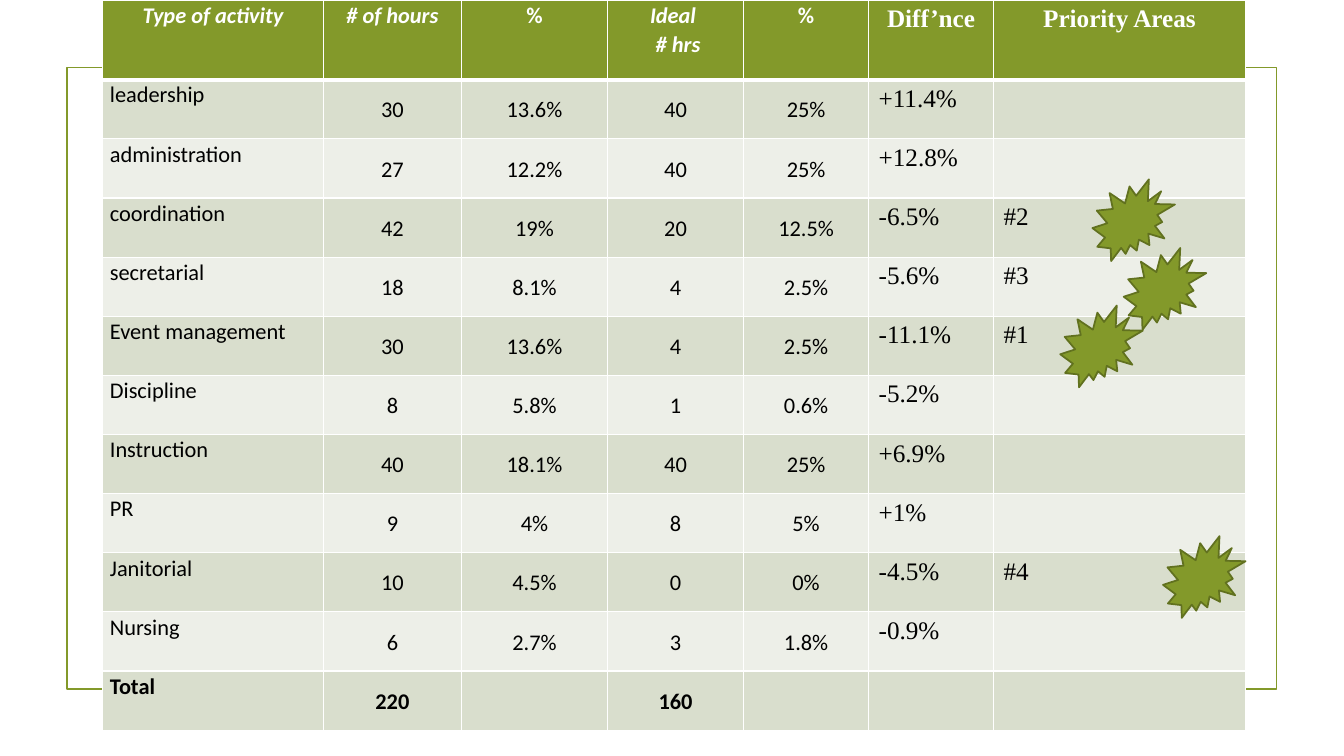
from dataclasses import dataclass
from lxml.etree import SubElement
from pptx import Presentation
from pptx.dml.color import RGBColor
from pptx.enum.shapes import MSO_SHAPE
from pptx.enum.text import MSO_ANCHOR, PP_ALIGN
from pptx.oxml.ns import qn
from pptx.util import Cm, Pt


@dataclass(frozen=True)
class Theme:
    green: str = "83992A"
    edge: str = "61711F"
    dark: str = "D9DECD"
    light: str = "EDEFE8"
    white: str = "FFFFFF"
    black: str = "000000"
    sans: str = "Calibri"
    serif: str = "Times New Roman"
    small: int = 16
    large: int = 18
    line: float = 1.25
    rule: int = 1
    heavy: int = 3


THEME = Theme()
WIDTHS = (5.56, 3.48, 3.68, 3.43, 3.15, 3.15, 6.35)
HEAD_HEIGHT = 2.01
ROW_HEIGHT = 1.49
SERIF_START = 5
ROWS = (
    ("Type of activity", "# of hours", "%", "Ideal \n # hrs", "%", "Diff’nce", "Priority Areas"),
    ("leadership", "30", "13.6%", "40", "25%", "+11.4%", ""),
    ("administration", "27", "12.2%", "40", "25%", "+12.8%", ""),
    ("coordination", "42", "19%", "20", "12.5%", "-6.5%", "#2"),
    ("secretarial", "18", "8.1%", "4", "2.5%", "-5.6%", "#3"),
    ("Event management", "30", "13.6%", "4", "2.5%", "-11.1%", "#1"),
    ("Discipline", "8", "5.8%", "1", "0.6%", "-5.2%", ""),
    ("Instruction", "40", "18.1%", "40", "25%", "+6.9%", ""),
    ("PR", "9", "4%", "8", "5%", "+1%", ""),
    ("Janitorial", "10", "4.5%", "0", "0%", "-4.5%", "#4"),
    ("Nursing", "6", "2.7%", "3", "1.8%", "-0.9%", ""),
    ("Total", "220", "", "160", "", "", ""),
)
BURSTS = ((26.72, 7.7), (27.53, 4.52), (29.31, 13.51), (28.32, 6.25))


def paint(item, color):
    item.fill.solid()
    item.fill.fore_color.rgb = RGBColor.from_string(color)


def add_shape(slide, kind, box, fill, line):
    shape = slide.shapes.add_shape(kind, *map(Cm, box))
    shape.shadow.inherit = False
    if fill:
        paint(shape, fill)
    else:
        shape.fill.background()
    shape.line.color.rgb = RGBColor.from_string(line)
    shape.line.width = Pt(THEME.line)


def add_rules(cell, row):
    holder = cell._tc.get_or_add_tcPr()
    for side in "LRTB":
        thick = (row, side) in ((0, "B"), (1, "T"))
        width = Pt(THEME.heavy if thick else THEME.rule)
        rule = SubElement(holder, qn(f"a:ln{side}"), w=str(width))
        solid = SubElement(rule, qn("a:solidFill"))
        SubElement(solid, qn("a:srgbClr"), val=THEME.white)


def style_text(cell, row, col):
    head = row == 0
    serif = col >= SERIF_START
    for para in cell.text_frame.paragraphs:
        para.alignment = PP_ALIGN.CENTER if head or 0 < col < SERIF_START else PP_ALIGN.LEFT
        if not serif:
            para.line_spacing = 1.07
        for run in para.runs:
            font = run.font
            font.name = THEME.serif if serif else THEME.sans
            font.size = Pt(THEME.large if serif else THEME.small)
            font.bold = head or row == len(ROWS) - 1
            font.italic = head and not serif and run.text != "%"
            font.color.rgb = RGBColor.from_string(THEME.white if head else THEME.black)


def fill_cell(cell, text, row, col):
    cell.text_frame.text = text
    if col < SERIF_START:
        cell.margin_left = cell.margin_right = Cm(0.18)
        cell.margin_top = cell.margin_bottom = Cm(0)
    if row and 0 < col < SERIF_START:
        cell.vertical_anchor = MSO_ANCHOR.MIDDLE
    add_rules(cell, row)
    band = THEME.dark if row % 2 else THEME.light
    paint(cell, band if row else THEME.green)
    style_text(cell, row, col)


def add_grid(slide):
    height = HEAD_HEIGHT + ROW_HEIGHT * (len(ROWS) - 1)
    frame = slide.shapes.add_table(
        len(ROWS), len(WIDTHS), Cm(2.59), Cm(0), Cm(sum(WIDTHS)), Cm(height))
    table = frame.table
    for col, width in enumerate(WIDTHS):
        table.columns[col].width = Cm(width)
    for row, texts in enumerate(ROWS):
        table.rows[row].height = Cm(ROW_HEIGHT if row else HEAD_HEIGHT)
        for col, text in enumerate(texts):
            fill_cell(table.cell(row, col), text, row, col)


def main():
    deck = Presentation()
    deck.slide_width, deck.slide_height = Cm(33.87), Cm(19.05)
    slide = deck.slides.add_slide(deck.slide_layouts[6])
    add_shape(slide, MSO_SHAPE.RECTANGLE, (1.69, 1.7, 30.48, 15.67), None, THEME.green)
    add_grid(slide)
    for left, top in BURSTS:
        add_shape(slide, MSO_SHAPE.EXPLOSION2, (left, top, 2.08, 2.06), THEME.green, THEME.edge)
    deck.save("out.pptx")


if __name__ == "__main__":
    main()
